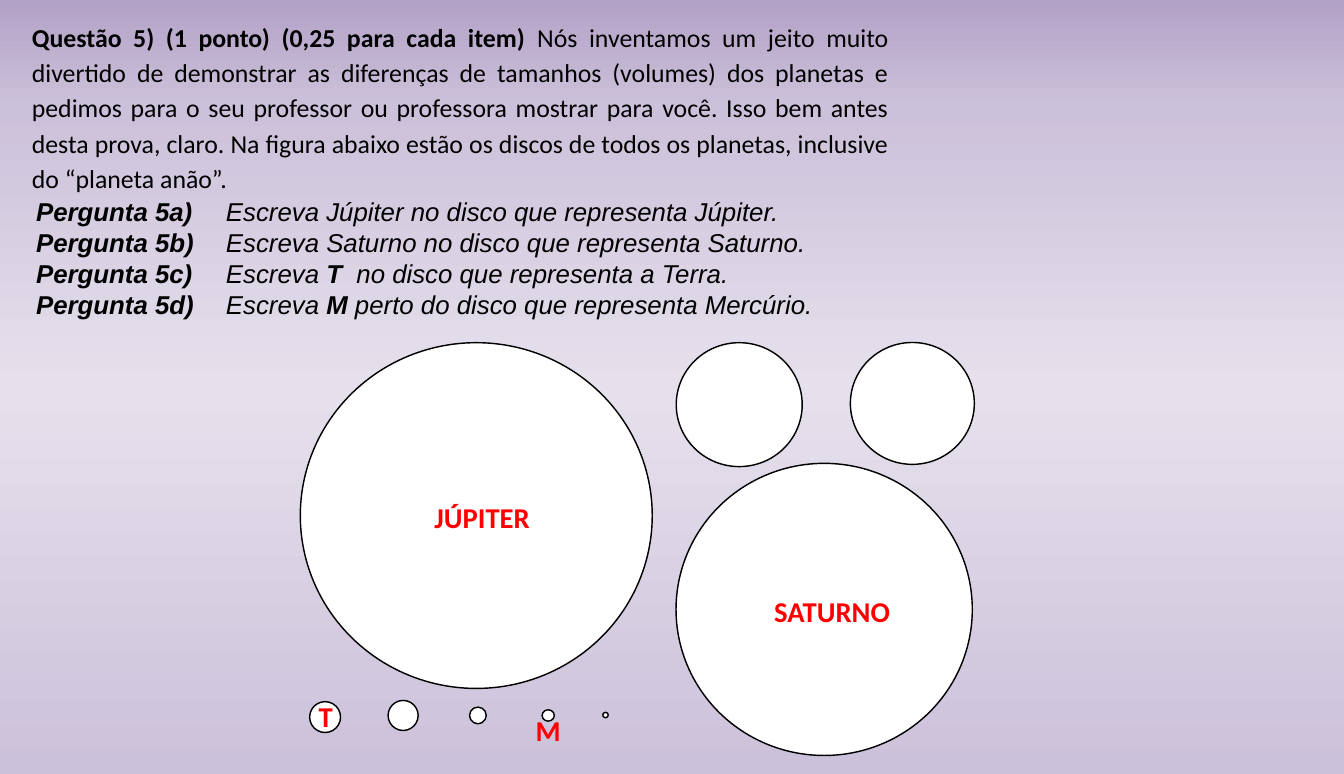
from copy import deepcopy
from dataclasses import dataclass

from pptx import Presentation
from pptx.dml.color import RGBColor
from pptx.enum.shapes import MSO_SHAPE
from pptx.enum.text import MSO_ANCHOR, MSO_AUTO_SIZE, PP_ALIGN
from pptx.oxml.ns import qn
from pptx.util import Cm, Pt

JUSTIFY, LEFT = PP_ALIGN.JUSTIFY, PP_ALIGN.LEFT
TOP = MSO_ANCHOR.TOP
GROW = MSO_AUTO_SIZE.SHAPE_TO_FIT_TEXT
OVAL = MSO_SHAPE.OVAL
NO_GRID_STYLE = "{2D5ABB26-0587-4C30-8999-92F81FD0307C}"

STATEMENT = [
    ("Questão 5) (1 ponto) (0,25 para cada item) ", True),
    ("Nós inventamos um jeito muito divertido de demonstrar as diferenças de "
     "tamanhos (volumes) dos planetas e pedimos para o seu professor ou professora "
     "mostrar para você. Isso bem antes desta prova, claro. Na figura abaixo estão "
     "os discos de todos os planetas, inclusive do “planeta anão”.", False),
]
QUESTIONS = [
    ("Pergunta 5a)", [("Escreva Júpiter no disco que representa Júpiter.", False)]),
    ("Pergunta 5b)", [("Escreva Saturno no disco que representa Saturno.", False)]),
    ("Pergunta 5c)", [("Escreva ", False), ("T", True),
                      ("  no disco que representa a Terra.", False)]),
    ("Pergunta 5d)", [("Escreva ", False), ("M", True),
                      (" perto do disco que representa Mercúrio.", False)]),
]
# center x, center y, width, height
DISCS = [
    (11.72, 12.69, 8.66, 8.51),
    (20.28, 15, 7.29, 7.19),
    (18.19, 9.96, 3.1, 3.05),
    (22.45, 9.93, 3.05, 3),
    (8, 17.65, 0.76, 0.76),
    (9.92, 17.61, 0.74, 0.74),
    (11.76, 17.61, 0.41, 0.41),
    (13.49, 17.61, 0.3, 0.28),
    (14.9, 17.6, 0.13, 0.13),
]
# text, left, top, width
ANSWERS = [
    ("JÚPITER", 10.44, 12.17, 2.87),
    ("SATURNO", 18.8, 14.5, 3.38),
    ("T", 7.59, 17.07, 0.86),
    ("M", 12.93, 17.42, 1.14),
]


@dataclass(frozen=True)
class Theme:
    text: str = "000000"
    answer: str = "FF0000"
    disc: str = "FFFFFF"
    outline: str = "000000"
    background: tuple = ((0, "B3A2C7"), (0.14, "CCC1DA"),
                         (0.5, "E6E0EC"), (1, "CCC1DA"))
    main_font: str = "Calibri"
    table_font: str = "Arial"
    body_size: int = 18
    answer_size: int = 20


THEME = Theme()


def rgb(value):
    return RGBColor.from_string(value)


def write(tf, runs, font=THEME.main_font, size=THEME.body_size, color=THEME.text,
          italic=False, align=LEFT, spacing=1.0):
    p = tf.paragraphs[0]
    p.alignment = align
    p.line_spacing = spacing
    for text, bold in runs:
        r = p.add_run()
        r.text = text
        r.font.name = font
        r.font.size = Pt(size)
        r.font.color.rgb = rgb(color)
        r.font.bold = bold
        r.font.italic = italic


def paint_background(s):
    fill = s.background.fill
    fill.gradient()
    fill.gradient_angle = 270
    stop_list = next(s.element.iter(qn("a:gsLst")))
    for _ in range(len(THEME.background) - len(stop_list)):
        stop_list.append(deepcopy(stop_list[0]))
    for stop, (position, color) in zip(fill.gradient_stops, THEME.background):
        stop.position = position
        stop.color.rgb = rgb(color)


def add_statement(s):
    sp = s.shapes.title
    sp.left, sp.top, sp.width, sp.height = Cm(0.53), Cm(0.3), Cm(21.59), Cm(4.6)
    tf = sp.text_frame
    tf.word_wrap = True
    tf.vertical_anchor = TOP
    tf.auto_size = GROW
    write(tf, STATEMENT, align=JUSTIFY, spacing=1.14)


def add_questions(s):
    widths = (4.67, 16.46)
    row_height = 0.76
    frame = s.shapes.add_table(len(QUESTIONS), len(widths), Cm(0.76), Cm(4.88),
                               Cm(sum(widths)), Cm(row_height * len(QUESTIONS)))
    next(frame.element.iter(qn("a:tableStyleId"))).text = NO_GRID_STYLE
    table = frame.table
    table.first_row = table.horz_banding = False
    for column, width in zip(table.columns, widths):
        column.width = Cm(width)
    for row, (label, task) in zip(table.rows, QUESTIONS):
        row.height = Cm(row_height)
        for cell, runs in zip(row.cells, ([(label, True)], task)):
            cell.fill.background()
            cell.margin_left = cell.margin_right = Cm(0.13)
            cell.margin_top = cell.margin_bottom = 0
            write(cell.text_frame, runs, font=THEME.table_font, italic=True,
                  align=JUSTIFY)


def add_discs(s):
    group = s.shapes.add_group_shape()
    for x, y, width, height in DISCS:
        sp = group.shapes.add_shape(OVAL, Cm(x - width / 2), Cm(y - height / 2),
                                    Cm(width), Cm(height))
        sp.shadow.inherit = False
        sp.fill.solid()
        sp.fill.fore_color.rgb = rgb(THEME.disc)
        sp.line.color.rgb = rgb(THEME.outline)
        sp.line.width = Pt(1)


def add_answers(s):
    for text, left, top, width in ANSWERS:
        sp = s.shapes.add_textbox(Cm(left), Cm(top), Cm(width), Cm(1.12))
        tf = sp.text_frame
        tf.word_wrap = False
        tf.auto_size = GROW
        write(tf, [(text, True)], size=THEME.answer_size, color=THEME.answer)


def main():
    prs = Presentation()
    prs.slide_width, prs.slide_height = Cm(33.07), Cm(19.05)
    s = prs.slides.add_slide(prs.slide_layouts[5])
    paint_background(s)
    add_statement(s)
    add_questions(s)
    add_discs(s)
    add_answers(s)
    prs.save("out.pptx")


if __name__ == "__main__":
    main()
